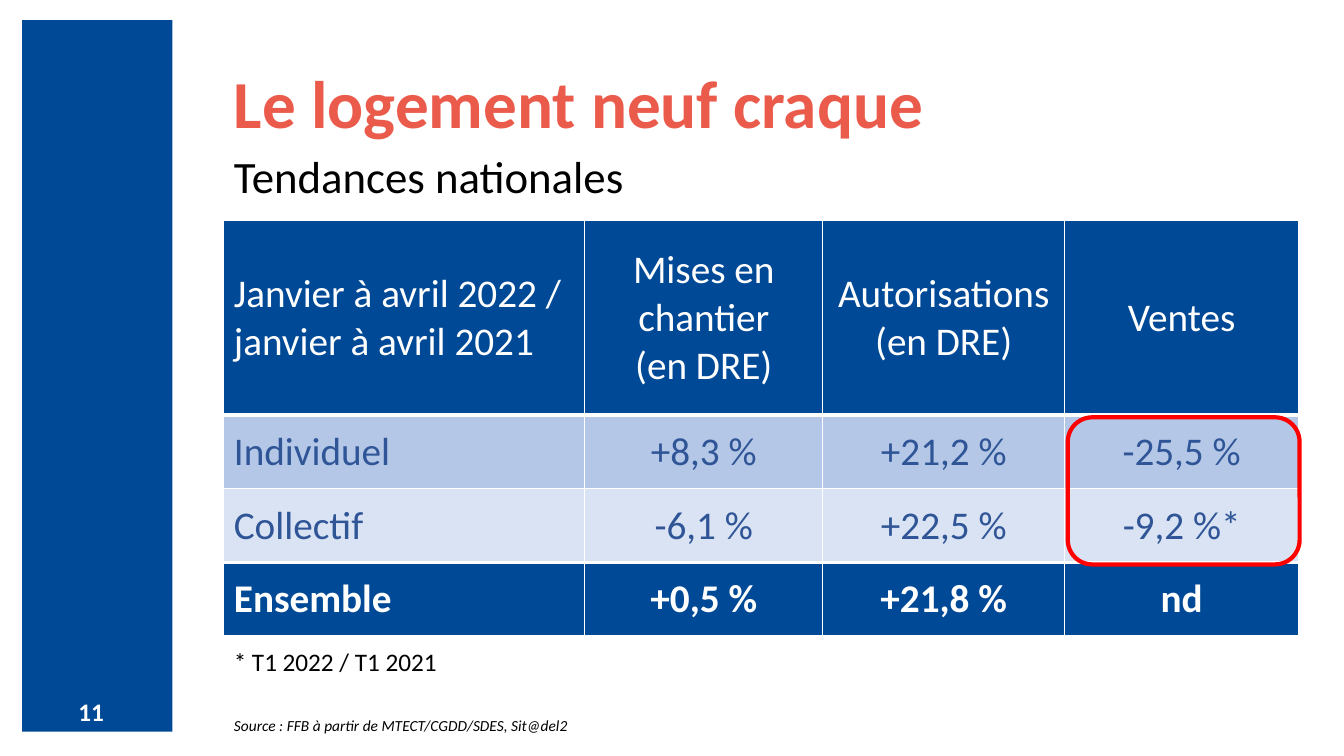
import dataclasses

import lxml.etree
import pptx
import pptx.dml.color
import pptx.enum.shapes
import pptx.enum.text
import pptx.oxml.ns
import pptx.util

Inches = pptx.util.Inches
Pt = pptx.util.Pt
qn = pptx.oxml.ns.qn
PP_ALIGN = pptx.enum.text.PP_ALIGN
MSO_SHAPE = pptx.enum.shapes.MSO_SHAPE


@dataclasses.dataclass(frozen=True)
class Theme:
    font: str = "Calibri"
    navy: str = "004996"
    coral: str = "EB5B4C"
    red: str = "FF0000"
    black: str = "000000"
    white: str = "FFFFFF"
    blue_text: str = "2F5597"
    blue_mid: str = "B4C7E7"
    blue_pale: str = "DAE3F3"
    title: int = 48
    subtitle: int = 32
    table: int = 28
    note: int = 18
    source: int = 11


def rgb(value):
    return pptx.dml.color.RGBColor.from_string(value)


class SlideBuilder:
    def __init__(self, slide, theme):
        self.slide = slide
        self.theme = theme

    def set_text(self, tf, text, size, color, bold=False, italic=False, align=PP_ALIGN.LEFT):
        tf.text = text
        for p in tf.paragraphs:
            p.alignment = align
            for r in p.runs:
                r.font.name = self.theme.font
                r.font.size = Pt(size)
                r.font.color.rgb = rgb(color)
                r.font.bold = bold
                r.font.italic = italic

    def placeholder(self, sp, box, text, size, color, **style):
        sp.left, sp.top, sp.width, sp.height = map(Inches, box)
        tf = sp.text_frame
        tf.word_wrap = True
        tf.auto_size = pptx.enum.text.MSO_AUTO_SIZE.NONE
        tf.vertical_anchor = pptx.enum.text.MSO_ANCHOR.TOP
        self.set_text(tf, text, size, color, **style)
        for p in tf.paragraphs:
            pPr = p._p.get_or_add_pPr()
            pPr.set("marL", "0")
            pPr.set("indent", "0")
            lxml.etree.SubElement(pPr, qn("a:buNone"))
            p.line_spacing = 0.9
            p.space_before = Pt(0)

    def text(self, box, text, size, color, **style):
        sp = self.slide.shapes.add_textbox(*map(Inches, box))
        sp.text_frame.word_wrap = True
        self.set_text(sp.text_frame, text, size, color, **style)

    def shape(self, kind, box, fill=None, line=None, width=0):
        sp = self.slide.shapes.add_shape(kind, *map(Inches, box))
        sp.shadow.inherit = False
        if fill:
            sp.fill.solid()
            sp.fill.fore_color.rgb = rgb(fill)
        else:
            sp.fill.background()
        if line:
            sp.line.color.rgb = rgb(line)
            sp.line.width = Pt(width)
        else:
            sp.line.fill.background()

    def border(self, cell, side, width):
        tcPr = cell._tc.get_or_add_tcPr()
        ln = lxml.etree.SubElement(tcPr, qn(f"a:ln{side}"), w=str(Pt(width)))
        fill = lxml.etree.SubElement(ln, qn("a:solidFill"))
        lxml.etree.SubElement(fill, qn("a:srgbClr"), val=self.theme.white)

    def table(self, left, top, widths, heights, rows, styles, rules):
        box = (left, top, sum(widths), sum(heights))
        frame = self.slide.shapes.add_table(len(rows), len(widths), *map(Inches, box))
        table = frame.table
        table.first_row = False
        table.horz_banding = False
        for column, width in zip(table.columns, widths):
            column.width = Inches(width)
        for i, (values, (fill, color, bold)) in enumerate(zip(rows, styles)):
            table.rows[i].height = Inches(heights[i])
            for j, value in enumerate(values):
                cell = table.cell(i, j)
                for side, width in zip("LRTB", (1, 1, rules[i], rules[i + 1])):
                    self.border(cell, side, width)
                cell.fill.solid()
                cell.fill.fore_color.rgb = rgb(fill)
                cell.vertical_anchor = pptx.enum.text.MSO_ANCHOR.MIDDLE
                align = PP_ALIGN.CENTER if j else PP_ALIGN.LEFT
                self.set_text(cell.text_frame, value, self.theme.table, color,
                              bold=bold, align=align)


def main():
    prs = pptx.Presentation()
    prs.slide_width = Inches(13.33)
    prs.slide_height = Inches(7.5)
    theme = Theme()
    slide = prs.slides.add_slide(prs.slide_layouts.get_by_name("Two Content"))
    s = SlideBuilder(slide, theme)
    title, subtitle, source = slide.placeholders
    left = 2.22

    s.shape(MSO_SHAPE.RECTANGLE, (0.22, 0.2, 1.49, 7.06), fill=theme.navy)
    s.text((0.68, 6.86, 0.56, 0.4), "11", theme.note, theme.white, bold=True)
    s.placeholder(title, (left, 0.65, 10.66, 0.83), "Le logement neuf craque",
                  theme.title, theme.coral, bold=True)
    s.placeholder(subtitle, (left, 1.49, 10.66, 0.5), "Tendances nationales",
                  theme.subtitle, theme.black)
    s.placeholder(source, (left, 7.07, 3.89, 0.24),
                  "Source : FFB à partir de MTECT/CGDD/SDES, Sit@del2",
                  theme.source, theme.black, italic=True)

    rows = [
        ("Janvier à avril 2022 / janvier à avril 2021", "Mises en chantier\n(en DRE)",
         "Autorisations\v(en DRE)", "Ventes"),
        ("Individuel", "+8,3 %", "+21,2 %", "-25,5 %"),
        ("Collectif", "-6,1 %", "+22,5 %", "-9,2 %*"),
        ("Ensemble", "+0,5 %", "+21,8 %", "nd"),
    ]
    styles = [
        (theme.navy, theme.white, False),
        (theme.blue_mid, theme.blue_text, False),
        (theme.blue_pale, theme.blue_text, False),
        (theme.navy, theme.white, True),
    ]
    s.table(left, 2.19, (3.58, 2.36, 2.4, 2.32), (1.93, 0.73, 0.73, 0.73),
            rows, styles, rules=(1, 3, 1, 2.25, 1))

    s.text((left, 6.36, 3.61, 0.4), "* T1 2022 / T1 2021", theme.note, theme.black)
    s.shape(MSO_SHAPE.ROUNDED_RECTANGLE, (10.59, 4.14, 2.3, 1.46), line=theme.red, width=3)
    prs.save("out.pptx")


if __name__ == "__main__":
    main()
